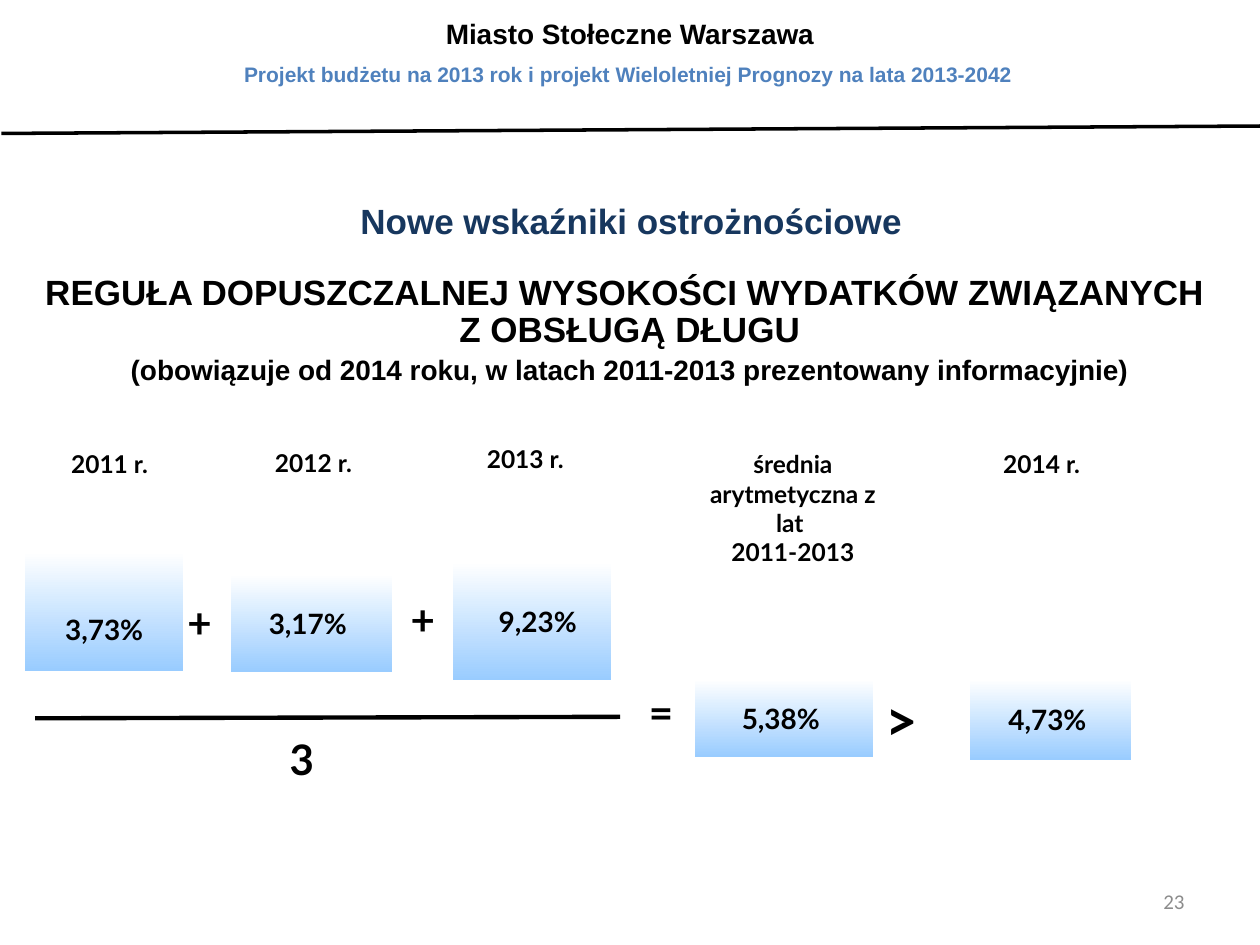
from dataclasses import dataclass

from lxml import etree
from pptx import Presentation
from pptx.dml.color import RGBColor
from pptx.enum.shapes import MSO_CONNECTOR, MSO_SHAPE
from pptx.enum.text import MSO_ANCHOR, MSO_AUTO_SIZE, PP_ALIGN
from pptx.oxml.ns import qn
from pptx.util import Cm, Pt

LEFT, MID, RIGHT = PP_ALIGN.LEFT, PP_ALIGN.CENTER, PP_ALIGN.RIGHT
TOP, CENTRE = MSO_ANCHOR.TOP, MSO_ANCHOR.MIDDLE
FIXED = MSO_AUTO_SIZE.NONE
RECT = MSO_SHAPE.RECTANGLE
LINE = MSO_CONNECTOR.STRAIGHT
BLACK, WHITE, SKY = "000000", "FFFFFF", "99CCFF"


@dataclass
class Area:
    x: float
    y: float
    w: float
    h: float

    def lengths(self) -> tuple:
        return Cm(self.x), Cm(self.y), Cm(self.w), Cm(self.h)


@dataclass
class Style:
    size: float
    font: str = "Lato"
    color: str = BLACK
    bold: bool = True
    align: int = MID
    anchor: int = CENTRE


@dataclass
class Share:
    text: str
    area: Area
    right: float = 0  # shift of the text within its box
    down: float = 0


def rgb(code: str) -> RGBColor:
    return RGBColor.from_string(code)


def write(shape, text: str, style: Style) -> None:
    frame = shape.text_frame
    frame.text = text
    frame.word_wrap = True
    frame.auto_size = FIXED
    frame.vertical_anchor = style.anchor
    for para in frame.paragraphs:
        para.alignment = style.align
        for run in para.runs:
            font = run.font
            font.name, font.size, font.bold = style.font, Pt(style.size), style.bold
            font.color.rgb = rgb(style.color)


def label(slide, text: str, area: Area, style: Style) -> None:
    write(slide.shapes.add_textbox(*area.lengths()), text, style)


def place(holder, text: str, area: Area, style: Style):
    holder.left, holder.top, holder.width, holder.height = area.lengths()
    write(holder, text, style)
    para = holder.text_frame.paragraphs[0]
    para.line_spacing = Pt(21)
    para.space_before = Pt(0)
    return para


def rule(slide, x1: float, y1: float, x2: float, y2: float, width: float) -> None:
    line = slide.shapes.add_connector(LINE, Cm(x1), Cm(y1), Cm(x2), Cm(y2))
    line.line.color.rgb = rgb(BLACK)
    line.line.width = Pt(width)
    etree.SubElement(line._element.spPr, qn("a:effectLst"))


def box(slide, share: Share, style: Style) -> None:
    shape = slide.shapes.add_shape(RECT, *share.area.lengths())
    shape.shadow.inherit = False
    shape.line.fill.background()
    shape.fill.gradient()
    shape.fill.gradient_angle = 270
    for stop, code in zip(shape.fill.gradient_stops, (WHITE, SKY)):
        stop.color.rgb = rgb(code)
    write(shape, share.text, style)
    frame = shape.text_frame
    frame.margin_left = Cm(0.25 + share.right)
    frame.margin_right = Cm(0.25 - share.right)
    frame.margin_top = Cm(0.13 + 2 * share.down)


def main() -> None:
    deck = Presentation()
    deck.slide_width, deck.slide_height = Cm(25.4), Cm(19.05)
    slide = deck.slides.add_slide(deck.slide_layouts[1])

    # Header
    label(slide, "Miasto Stołeczne Warszawa", Area(0, 0.2, 25.4, 0.94),
          Style(16, "Arial", anchor=TOP))
    label(slide, "Projekt budżetu na 2013 rok i projekt Wieloletniej Prognozy na lata 2013-2042",
          Area(-0.03, 1.12, 25.4, 1.4), Style(12, "Arial", "4F81BD", anchor=TOP))
    rule(slide, 0.03, 2.69, 25.43, 2.54, 2)

    # Title and rule
    title, body = slide.placeholders
    place(title, "Nowe wskaźniki ostrożnościowe", Area(0, 4.01, 25.45, 1.02),
          Style(20, "Arial", "17375E", anchor=TOP))
    para = place(body, "REGUŁA DOPUSZCZALNEJ WYSOKOŚCI WYDATKÓW ZWIĄZANYCH \v"
                 "Z OBSŁUGĄ DŁUGU\v"
                 "(obowiązuje od 2014 roku, w latach 2011-2013 prezentowany informacyjnie)",
                 Area(-0.03, 5.44, 25.45, 2.49), Style(20, "Arial", anchor=TOP))
    para.runs[-1].font.size = Pt(16)
    props = para._p.get_or_add_pPr()
    props.set("marL", "0")
    props.set("indent", "0")
    etree.SubElement(props, qn("a:buNone"))

    # Column captions
    small = Style(14)
    for year, x, y in ((2011, 0.51, 8.92), (2012, 4.62, 8.89),
                       (2013, 8.89, 8.81), (2014, 19.3, 8.92)):
        label(slide, f"{year} r.", Area(x, y, 3.4, 0.86), small)
    label(slide, "średnia arytmetyczna z lat \v2011-2013",
          Area(13.89, 8.92, 4.19, 2.64), small)

    # Values
    shares = (
        Share("3,73%", Area(0.51, 11.13, 3.18, 2.39), down=0.36),
        Share("3,17%", Area(4.65, 11.58, 3.25, 1.96), right=-0.07),
        Share("9,23%", Area(9.14, 11.33, 3.18, 2.39), right=0.11),
        Share("5,38%", Area(14.02, 13.69, 3.58, 1.57), right=-0.07),
        Share("4,73%", Area(19.56, 13.69, 3.25, 1.63), right=-0.07),
    )
    for share in shares:
        box(slide, share, Style(16))

    # Fraction bar, divisor and signs
    rule(slide, 0.71, 14.48, 12.5, 14.45, 2.5)
    for sign, x, y in (("+", 3.53, 11.89), ("+", 8.03, 11.84),
                       ("=", 12.83, 13.72), ("3", 5.59, 14.66)):
        label(slide, sign, Area(x, y, 1.19, 1.27), Style(24, align=LEFT))
    label(slide, ">", Area(17.6, 13.69, 1.12, 1.63), Style(32, align=LEFT))

    # Page number
    label(slide, "23", Area(18.21, 17.65, 5.92, 1.02),
          Style(12, "Calibri", "8C8C8C", False, RIGHT))

    deck.save("out.pptx")


if __name__ == "__main__":
    main()
